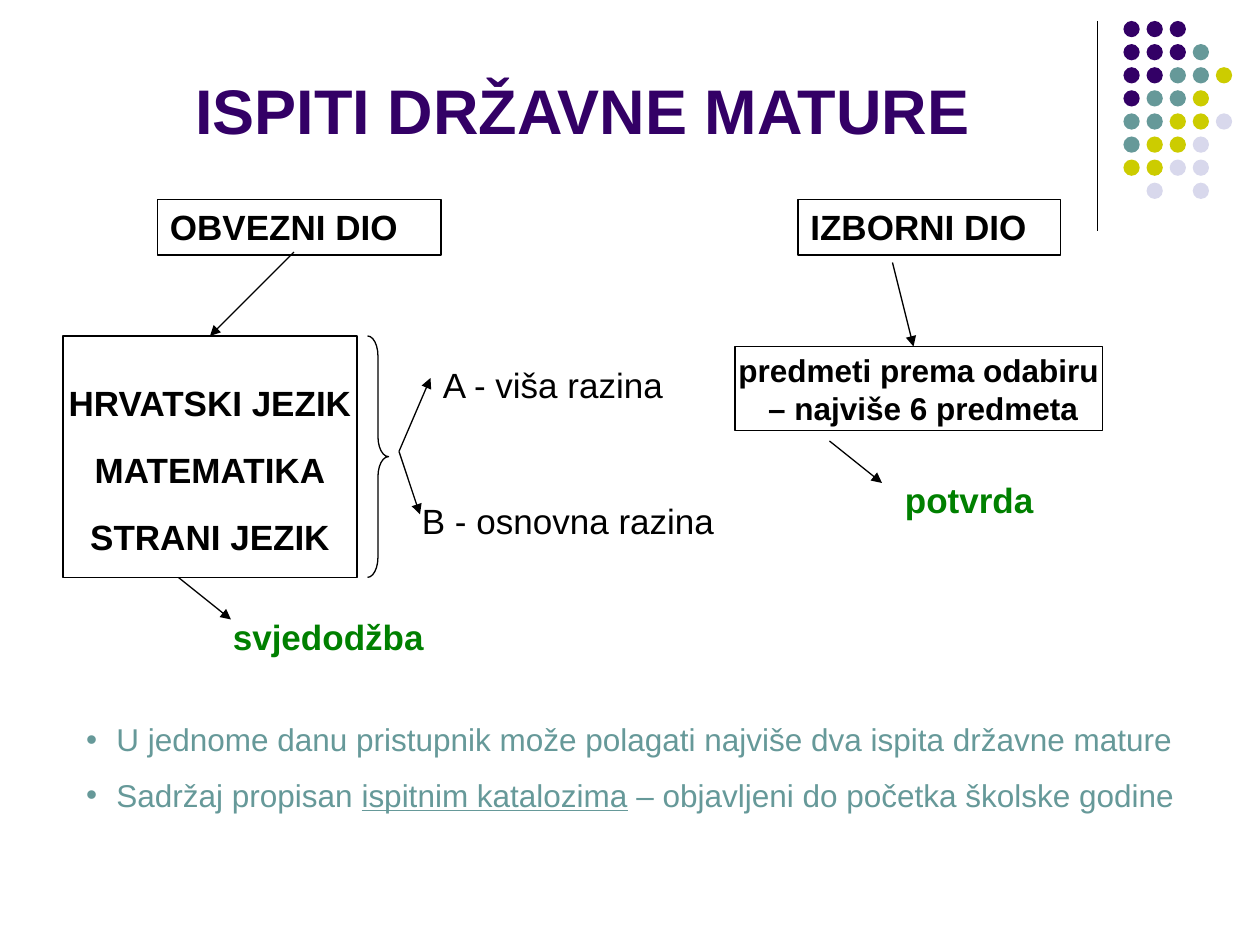
from lxml.etree import SubElement
from pptx import Presentation
from pptx.dml.color import RGBColor
from pptx.enum.shapes import MSO_CONNECTOR, MSO_SHAPE
from pptx.enum.text import MSO_ANCHOR, MSO_AUTO_SIZE, PP_ALIGN
from pptx.oxml.ns import qn
from pptx.util import Inches, Pt

BLACK = RGBColor(0x00, 0x00, 0x00)
PURPLE = RGBColor(0x33, 0x00, 0x66)
TEAL = RGBColor(0x66, 0x99, 0x99)
OLIVE = RGBColor(0xCC, 0xCC, 0x00)
LAVENDER = RGBColor(0xD8, 0xD8, 0xEC)
GREEN = RGBColor(0x00, 0x80, 0x00)

DOT_COLORS = {"P": PURPLE, "T": TEAL, "O": OLIVE, "L": LAVENDER}
DOT_ROWS = ["PPP", "PPPT", "PPTTO", "PTTO", "TTOOL", "TOOL", "OOLL", " L L"]


class ExamSlide:
    """Draws on one slide, with lengths in cells of a grid of 120 columns by 90 rows."""

    font = "Arial"
    line_width = Pt(0.75)
    columns, rows = 120, 90

    def __init__(self, deck):
        self.slide = deck.slides.add_slide(deck.slide_layouts[1])
        self.shapes = self.slide.shapes
        self.column = deck.slide_width / self.columns
        self.row = deck.slide_height / self.rows

    def place(self, x, y, width, height):
        return (round(x * self.column), round(y * self.row),
                round(width * self.column), round(height * self.row))

    def move(self, shape, area):
        shape.left, shape.top, shape.width, shape.height = self.place(*area)

    def format_text(self, frame, size, color, bold=False, align=PP_ALIGN.LEFT, spacing=1.0):
        for paragraph in frame.paragraphs:
            paragraph.alignment = align
            paragraph.line_spacing = spacing
            for run in paragraph.runs:
                run.font.name = self.font
                run.font.size = Pt(size)
                run.font.bold = bold
                run.font.color.rgb = color

    def title(self, text, area):
        heading = self.shapes.title
        self.move(heading, area)
        heading.text_frame.text = text
        heading.text_frame.vertical_anchor = MSO_ANCHOR.BOTTOM
        heading.text_frame.auto_size = MSO_AUTO_SIZE.NONE
        self.format_text(heading.text_frame, 36, PURPLE, True, PP_ALIGN.CENTER)

    def bullets(self, items, area):
        notes = self.slide.placeholders[1]
        self.move(notes, area)
        frame = notes.text_frame
        frame.auto_size = MSO_AUTO_SIZE.NONE
        frame.text = "\n".join("" for _ in items)
        for paragraph, pieces in zip(frame.paragraphs, items):
            paragraph.space_before = Pt(10)
            for text, underlined in pieces:
                run = paragraph.add_run()
                run.text = text
                run.font.underline = underlined
            properties = paragraph._p.get_or_add_pPr()
            properties.set("marL", str(Inches(0.24)))
            properties.set("indent", str(-Inches(0.24)))
        self.format_text(frame, 18, TEAL)
        for paragraph in frame.paragraphs:
            SubElement(paragraph._p.pPr, qn("a:buChar")).set("char", "•")

    def label(self, text, area, color=BLACK, bold=False):
        frame = self.shapes.add_textbox(*self.place(*area)).text_frame
        frame.word_wrap = True
        frame.text = text
        self.format_text(frame, 20, color, bold)

    def outline(self, preset, area):
        shape = self.shapes.add_shape(preset, *self.place(*area))
        shape.shadow.inherit = False
        shape.fill.background()
        shape.line.color.rgb = BLACK
        shape.line.width = self.line_width
        return shape

    def header_box(self, text, area):
        box = self.outline(MSO_SHAPE.RECTANGLE, area)
        box.text_frame.text = text
        box.text_frame.vertical_anchor = MSO_ANCHOR.TOP
        self.format_text(box.text_frame, 20, BLACK, True)

    def subject_box(self, text, area, size, spacing=1.0):
        box = self.outline(MSO_SHAPE.RECTANGLE, area)
        box.text_frame.text = text
        box.text_frame.word_wrap = False
        box.text_frame.vertical_anchor = MSO_ANCHOR.MIDDLE
        self.format_text(box.text_frame, size, BLACK, True, PP_ALIGN.CENTER, spacing)
        return box

    def brace(self, area):
        self.outline(MSO_SHAPE.RIGHT_BRACE, area).adjustments[0] = 0.96

    def line(self, start, end):
        connector = self.shapes.add_connector(
            MSO_CONNECTOR.STRAIGHT, *self.place(*start, *end))
        connector.line.color.rgb = BLACK
        connector.line.width = self.line_width
        SubElement(connector._element.spPr, qn("a:effectLst"))
        return connector

    def arrow(self, start, end):
        connector = self.line(start, end)
        stroke = connector._element.spPr.find(qn("a:ln"))
        SubElement(stroke, qn("a:tailEnd")).set("type", "triangle")
        return connector

    def dots(self, x, y, pitch, size):
        for row, colors in enumerate(DOT_ROWS):
            for column, key in enumerate(colors):
                if key in DOT_COLORS:
                    area = self.place(x + column * pitch, y + row * pitch, size, size)
                    dot = self.shapes.add_shape(MSO_SHAPE.OVAL, *area)
                    dot.shadow.inherit = False
                    dot.fill.solid()
                    dot.fill.fore_color.rgb = DOT_COLORS[key]
                    dot.line.fill.background()


def main():
    deck = Presentation()
    deck.slide_width, deck.slide_height = Inches(10), Inches(7.5)
    exams = ExamSlide(deck)

    exams.line((104.5, 2), (104.5, 22))
    exams.dots(107, 2, 2.2, 1.55)
    exams.title("ISPITI DRŽAVNE MATURE", (6, 5, 99, 9.6))

    exams.header_box("OBVEZNI DIO", (15, 19, 27, 5.3))
    exams.header_box("IZBORNI DIO", (76, 19, 25, 5.3))
    required = exams.subject_box(
        "HRVATSKI JEZIK\nMATEMATIKA\nSTRANI JEZIK", (6, 32, 28, 23), 20, 1.6)
    exams.subject_box("predmeti prema odabiru\n – najviše 6 predmeta", (70, 33, 35, 8), 18)
    exams.brace((35, 32, 2, 23))

    exams.arrow((28, 24), (20, 32)).end_connect(required, 0)
    for start, end in [((38, 43), (41, 36)), ((38, 43), (40, 49)), ((85, 25), (87, 33)),
                       ((17, 55), (22, 59)), ((79, 42), (84, 46))]:
        exams.arrow(start, end)

    exams.label("A - viša razina", (41, 34, 26, 5.2))
    exams.label("B - osnovna razina", (39, 47, 34, 5.2))
    exams.label("svjedodžba", (21, 58, 24, 5.2), GREEN, True)
    exams.label("potvrda", (85, 45, 16, 5.2), GREEN, True)

    exams.bullets([
        [("U jednome danu pristupnik može polagati najviše dva ispita državne mature", False)],
        [("Sadržaj propisan ", False), ("ispitnim katalozima", True),
         (" – objavljeni do početka školske godine", False)],
    ], (7, 68, 107, 10.2))

    deck.save("out.pptx")


if __name__ == "__main__":
    main()
